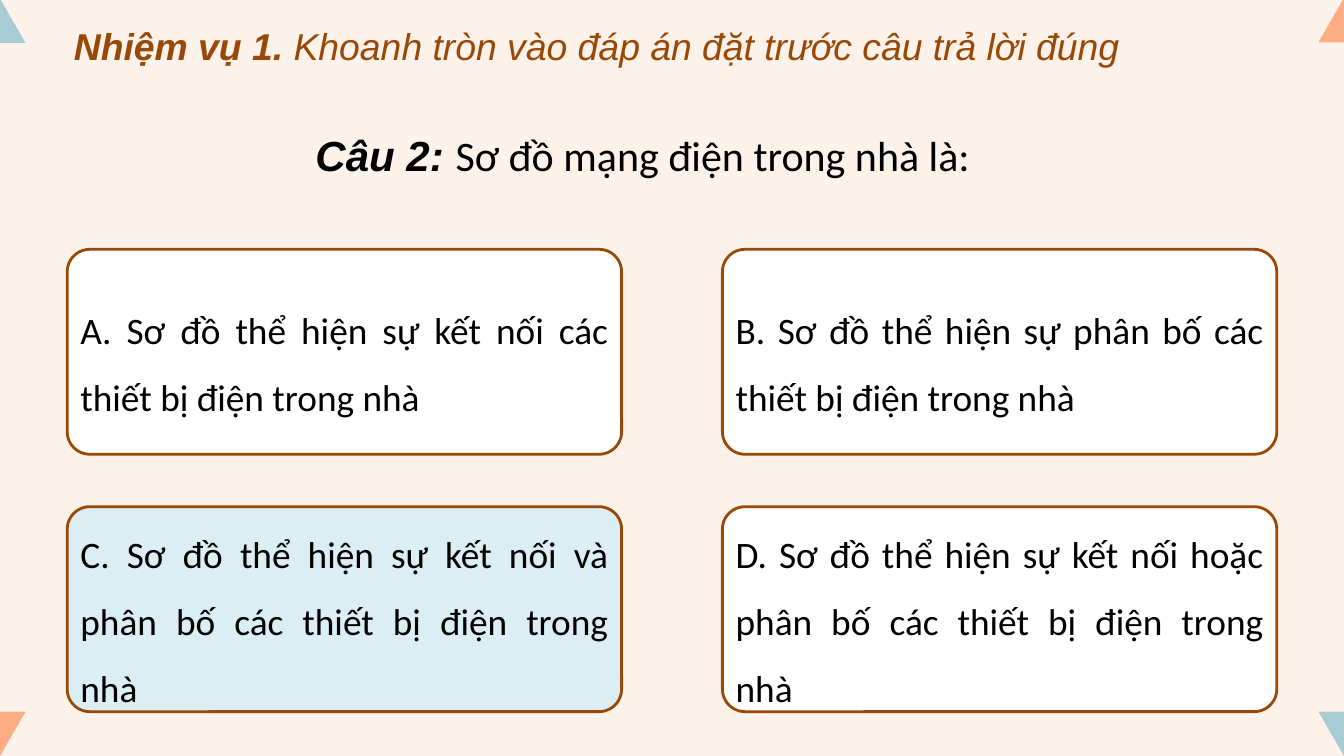
from pptx import Presentation
from pptx.dml.color import RGBColor
from pptx.enum.shapes import MSO_SHAPE
from pptx.enum.text import MSO_ANCHOR, MSO_AUTO_SIZE, PP_ALIGN
from pptx.util import Inches, Pt

CREAM = RGBColor(0xFC, 0xF2, 0xE9)
TEAL = RGBColor(0xA9, 0xCB, 0xD4)
ORANGE = RGBColor(0xFD, 0xAC, 0x84)
BROWN = RGBColor(0x98, 0x48, 0x07)
PALE_BLUE = RGBColor(0xDB, 0xEE, 0xF4)
WHITE = RGBColor(0xFF, 0xFF, 0xFF)
BLACK = RGBColor(0x00, 0x00, 0x00)


def add_run(paragraph, text, size, font_name, color, bold=False, italic=False):
    run = paragraph.add_run()
    run.text = text
    run.font.size = Pt(size)
    run.font.name = font_name
    run.font.color.rgb = color
    run.font.bold = bold
    run.font.italic = italic


def add_filled_shape(kind, left, top, width, height, color):
    shape = slide.shapes.add_shape(
        kind, Inches(left), Inches(top), Inches(width), Inches(height)
    )
    shape.shadow.inherit = False
    shape.fill.solid()
    shape.fill.fore_color.rgb = color
    shape.line.fill.background()
    return shape


presentation = Presentation()
presentation.slide_width = Inches(20)
presentation.slide_height = Inches(11.25)
slide = presentation.slides.add_slide(presentation.slide_layouts[5])
slide.background.fill.solid()
slide.background.fill.fore_color.rgb = CREAM

corners = [
    (-0.38, -0.02, TEAL, 0),
    (19.62, -0.03, ORANGE, 0),
    (-0.38, 10.59, ORANGE, 180),
    (19.62, 10.59, TEAL, 180),
]
for left, top, color, rotation in corners:
    triangle = add_filled_shape(
        MSO_SHAPE.ISOSCELES_TRIANGLE, left, top, 0.76, 0.66, color
    )
    triangle.rotation = rotation

title = slide.shapes.title
title.left, title.top = Inches(1), Inches(0.3)
title.width, title.height = Inches(17.02), Inches(0.77)
title.text_frame.auto_size = MSO_AUTO_SIZE.SHAPE_TO_FIT_TEXT
title.text_frame.vertical_anchor = MSO_ANCHOR.TOP
paragraph = title.text_frame.paragraphs[0]
paragraph.alignment = PP_ALIGN.LEFT
add_run(paragraph, "Nhiệm vụ 1. ", 40, "Arial", BROWN, bold=True, italic=True)
add_run(
    paragraph,
    "Khoanh tròn vào đáp án đặt trước câu trả lời đúng",
    40, "Arial", BROWN, italic=True,
)

question = slide.shapes.add_textbox(
    Inches(1.25), Inches(1.51), Inches(16.77), Inches(1.1)
)
question.text_frame.word_wrap = True
question.text_frame.auto_size = MSO_AUTO_SIZE.SHAPE_TO_FIT_TEXT
paragraph = question.text_frame.paragraphs[0]
paragraph.alignment = PP_ALIGN.CENTER
paragraph.line_spacing = 1.5
add_run(paragraph, "Câu 2: ", 45, "Arial", BLACK, bold=True, italic=True)
add_run(paragraph, "Sơ đồ mạng điện trong nhà là: ", 45, "Calibri", BLACK)

answers = [
    ("A. Sơ đồ thể hiện sự kết nối các thiết bị điện trong nhà ", WHITE),
    ("B. Sơ đồ thể hiện sự phân bố các thiết bị điện trong nhà ", WHITE),
    ("C. Sơ đồ thể hiện sự kết nối và phân bố các thiết bị điện trong nhà ", PALE_BLUE),
    ("D. Sơ đồ thể hiện sự kết nối hoặc phân bố các thiết bị điện trong nhà ", WHITE),
]
for index, (text, color) in enumerate(answers):
    row, column = divmod(index, 2)
    answer = add_filled_shape(
        MSO_SHAPE.ROUNDED_RECTANGLE,
        1 + 9.75 * column, 3.71 + 3.83 * row, 8.25, 3.05, color,
    )
    answer.adjustments[0] = 0.11
    answer.line.color.rgb = BROWN
    answer.line.width = Pt(3)
    answer.text_frame.word_wrap = True
    answer.text_frame.vertical_anchor = MSO_ANCHOR.MIDDLE
    paragraph = answer.text_frame.paragraphs[0]
    paragraph.alignment = PP_ALIGN.JUSTIFY
    paragraph.line_spacing = 1.5
    add_run(paragraph, text, 40, "Calibri", BLACK)

presentation.save("out.pptx")
